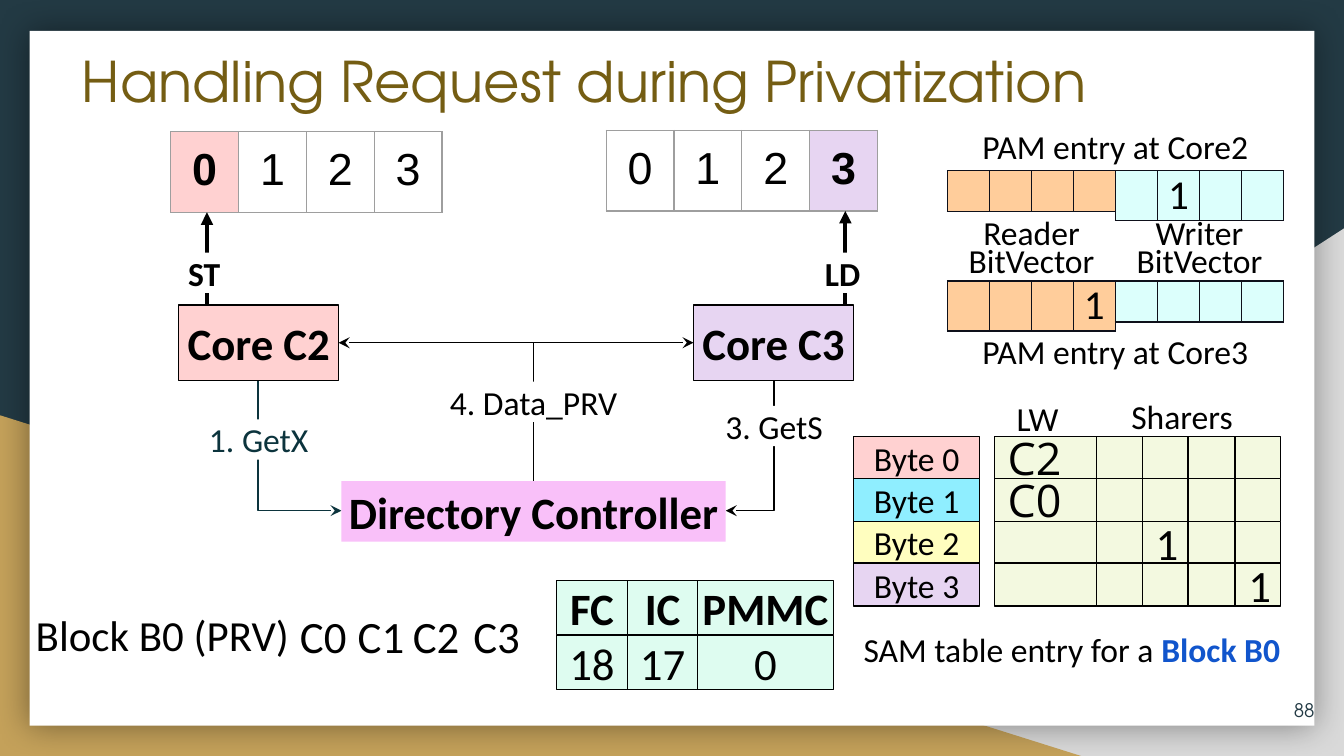
from lxml.etree import SubElement
from pptx import Presentation
from pptx.dml.color import RGBColor
from pptx.enum.shapes import MSO_CONNECTOR, MSO_SHAPE
from pptx.enum.text import MSO_ANCHOR, MSO_AUTO_SIZE, PP_ALIGN
from pptx.oxml.ns import qn
from pptx.util import Emu, Pt

EMU_PER_PX = 9144
BLACK, WHITE, NAVY = "000000", "FFFFFF", "233A44"
PINK, LILAC, ORANGE, AQUA = "FFD1D1", "E7D5F2", "FFCD9B", "DCFFFC"
SAM_GREEN, MINT = "F3F9E0", "DEFCF0"
BODY, DISPLAY = "Calibri", "TeX Gyre Adventor"


def px(length):
    """Turn a length in px into EMU."""
    return Emu(round(length * EMU_PER_PX))


def rgb(code):
    """Turn a hex string into a colour."""
    return RGBColor.from_string(code)


def apply(target, **values):
    """Set each given attribute on the target."""
    for name, value in values.items():
        setattr(target, name, value)


def write(frame, words, size=18, bold=False, color=BLACK, font=BODY,
          align=PP_ALIGN.CENTER, anchor=MSO_ANCHOR.MIDDLE, inset=0, spacing=None):
    """Fill a text frame with one formatted paragraph."""
    apply(frame, word_wrap=True, auto_size=MSO_AUTO_SIZE.NONE, vertical_anchor=anchor,
          margin_left=px(inset), margin_right=px(inset), margin_top=0, margin_bottom=0)
    paragraph = frame.paragraphs[0]
    apply(paragraph, alignment=align, line_spacing=spacing)
    return add_run(paragraph, words, size, bold, color, font)


def add_run(paragraph, words, size, bold, color, font=BODY):
    """Append a formatted run to a paragraph."""
    run = paragraph.add_run()
    run.text = words
    apply(run.font, size=Pt(size), bold=bold, name=font)
    run.font.color.rgb = rgb(color)
    return paragraph


def add_text(slide, box, words, **style):
    """Place a text box and return its paragraph."""
    return write(slide.shapes.add_textbox(*map(px, box)).text_frame, words, **style)


def add_block(slide, box, fill, words="", outline=BLACK, kind=MSO_SHAPE.RECTANGLE, **style):
    """Place a filled shape, with a thin outline and text where given."""
    block = slide.shapes.add_shape(kind, *map(px, box))
    block.shadow.inherit = False
    block.fill.solid()
    block.fill.fore_color.rgb = rgb(fill)
    if outline:
        block.line.color.rgb = rgb(outline)
        block.line.width = Pt(0.75)
    else:
        block.line.fill.background()
    if words:
        write(block.text_frame, words, **style)
    return block


def add_arrow(slide, start, end, color=BLACK, width=0.75, head="stealth"):
    """Draw an arrow that runs vertically, then turns to its end where needed."""
    (x0, y0), (x1, y1) = start, end
    dx, dy = x1 - x0, y1 - y0
    if dx:
        left, top = (x0 + x1 - abs(dy)) / 2, (y0 + y1 - abs(dx)) / 2
        arrow = slide.shapes.add_connector(
            MSO_CONNECTOR.ELBOW, px(left), px(top), px(left + abs(dy)), px(top + abs(dx)))
        properties = arrow._element.spPr
        properties.find(qn("a:prstGeom")).set("prst", "bentConnector2")
        frame = properties.find(qn("a:xfrm"))
        frame.set("rot", str((270 if dx > 0 else 90) * 60000))
        if (dx > 0) == (dy > 0):
            frame.set("flipH", "1")
    else:
        arrow = slide.shapes.add_connector(MSO_CONNECTOR.STRAIGHT, px(x0), px(y0), px(x1), px(y1))
    arrow.line.color.rgb = rgb(color)
    arrow.line.width = Pt(width)
    SubElement(arrow.line._get_or_add_ln(), qn("a:tailEnd"), type=head)
    SubElement(arrow._element.spPr, qn("a:effectLst"))


def add_strip(slide, box, words, fills, border, marked=None, inset=0, **style):
    """Place a one-row table whose marked cell is bold."""
    strip = slide.shapes.add_table(1, len(words), *map(px, box)).table
    apply(strip, first_row=False, horz_banding=False)
    for index, (cell, word, fill) in enumerate(zip(strip.rows[0].cells, words, fills)):
        properties = cell._tc.get_or_add_tcPr()
        for side in ("lnL", "lnR", "lnT", "lnB"):
            edge = SubElement(properties, qn("a:" + side), w=str(Pt(0.75)))
            SubElement(SubElement(edge, qn("a:solidFill")), qn("a:srgbClr"), val=border)
        cell.fill.solid()
        cell.fill.fore_color.rgb = rgb(fill)
        for side in ("left", "right", "top", "bottom"):
            setattr(cell, "margin_" + side, px(inset))
        paragraph = cell.text_frame.paragraphs[0]
        paragraph.alignment = PP_ALIGN.CENTER
        if word:
            add_run(paragraph, word, bold=index == marked, color=BLACK, **style)
        else:
            paragraph.font.size = Pt(18)


def build_backdrop(slide, box):
    """Draw the dark ground, the two corner triangles and the white panel."""
    left, top, width, height = box
    slide.background.fill.solid()
    slide.background.fill.fore_color.rgb = rgb(NAVY)
    corner = add_block(slide, (left + 392, top + 170, width - 392, height - 170), "D9D9D9",
                       outline=None, kind=MSO_SHAPE.RIGHT_TRIANGLE)
    corner._element.spPr.find(qn("a:xfrm")).set("flipH", "1")
    add_block(slide, (left, top + 309, 806, height - 309), "C4A15A",
              outline=None, kind=MSO_SHAPE.RIGHT_TRIANGLE)
    panel = add_block(slide, (left + 22, top + 23, width - 44, height - 46), WHITE, outline=None)
    effects = panel._element.spPr.find(qn("a:effectLst"))
    glow = SubElement(effects, qn("a:outerShdw"), blurRad=str(Pt(18)), dist="0", dir="0",
                      algn="ctr", rotWithShape="0")
    SubElement(SubElement(glow, qn("a:srgbClr"), val=BLACK), qn("a:alpha"), val="40000")


def build_title(slide, box):
    """Move and format the title placeholder."""
    title = slide.shapes.title
    slide.shapes._spTree.append(title._element)
    apply(title, **dict(zip(("left", "top", "width", "height"), map(px, box))))
    write(title.text_frame, "Handling Request during Privatization", size=30, color="745D13",
          font=DISPLAY, align=PP_ALIGN.LEFT, inset=10)


def build_core(slide, box, name, fill, access, arrow_x, label_x, line_corner, marked):
    """Draw a core, its cache line above and the access that joins them."""
    left, top, width, height = box
    line_left, line_top = line_corner
    fills = [fill if index == marked else WHITE for index in range(4)]
    add_strip(slide, (line_left, line_top, 202, 60), "0123", fills, "9E9E9E", marked,
              inset=10, size=24, font="Arial")
    add_block(slide, box, fill, name, size=24, bold=True)
    add_arrow(slide, (left + arrow_x, top), (left + arrow_x, line_top + 60),
              width=2.25, head="triangle")
    add_block(slide, (left + label_x, top - 39, 38, 30), WHITE, access, outline=None, bold=True)


def build_protocol(slide, box):
    """Draw both cores, the directory and the messages between them."""
    left, top, width, height = box
    directory_x, directory_y = left + 270, top + 261
    for core_x in (left + 125, left + 389):
        add_arrow(slide, (directory_x, directory_y), (core_x, top + 158))
    add_arrow(slide, (left + 65, top + 186), (left + 127, top + 283), "0C343D")
    add_arrow(slide, (left + 449, top + 186), (left + 413, top + 283))
    build_core(slide, (left + 6, top + 130, 119, 56), "Core C2", PINK, "ST", 21, 0,
               (left, top + 1), 0)
    build_core(slide, (left + 389, top + 130, 119, 56), "Core C3", LILAC, "LD", 113, 92,
               (left + 324, top), 3)
    add_block(slide, (left + 127, directory_y, 286, 45), "F9C0F9", "Directory Controller",
              outline=None, size=24, bold=True)
    messages = [(21, 215, 89, "1. GetX", "0C343D"), (203, 187, 134, "4. Data_PRV", BLACK),
                (394, 205, 110, "3. GetS", BLACK)]
    for x, y, span, message, color in messages:
        add_block(slide, (left + x, top + y, span, 30), WHITE, message, outline=None, color=color)


def build_block_state(slide, box):
    """Write the block name and the cores beside it."""
    left, top, width, height = box
    add_text(slide, (left, top, 196, height), "Block B0 (PRV)", size=23)
    for index, x in enumerate((196, 239, 280, 325)):
        add_text(slide, (left + x, top + 1, 43, height), f"C{index}", size=24)


def build_counters(slide, box):
    """Draw the counter names over their values."""
    left, top, width, height = box
    columns = [(0, 53, "FC", "18"), (53, 52, "IC", "17"), (105, width - 105, "PMMC", "0")]
    for x, span, name, value in columns:
        for y, words, bold in ((0, name, True), (41, value, False)):
            add_block(slide, (left + x, top + y, span, height - 41), MINT, words,
                      size=24, bold=bold)


def build_pam(slide, box):
    """Draw the access vectors of both cores with their captions."""
    left, top, width, height = box
    half = width // 2
    entries = [(0, 33, "PAM entry at Core2", (None, 1)),
               (152, 115, "PAM entry at Core3", (3, None))]
    for caption_y, strip_y, caption, set_bits in entries:
        add_text(slide, (left, top + caption_y, width, 30), caption)
        for side, (set_bit, fill) in enumerate(zip(set_bits, (ORANGE, AQUA))):
            bits = ["1" if bit == set_bit else "" for bit in range(4)]
            add_strip(slide, (left + side * half, top + strip_y, half, 30), bits, [fill] * 4,
                      "0E101A", size=22, font=BODY)
    for side, role in enumerate(("Reader", "Writer")):
        add_text(slide, (left + side * half, top + 72, half, 42), f"{role} BitVector",
                 spacing=0.7, inset=10)


def build_sam(slide, box):
    """Draw the last writer and sharers of each byte."""
    left, top, width, height = box
    add_text(slide, (left + 111, top + 2, 52, 18), "LW", spacing=0.6)
    add_text(slide, (left + 194, top, 101, 18), "Sharers", spacing=0.6)
    column_edges = [105] + [181 + 103 * column // 3 for column in range(5)]
    row_edges = [top + 20 + 63 * row // 2 for row in range(5)]
    marks = {(0, 0): "C2", (1, 0): "C0", (2, 2): "1", (3, 4): "1"}
    for row, fill in enumerate((PINK, "8FEEFF", "FFFEBF", LILAC)):
        y, tall = row_edges[row], row_edges[row + 1] - row_edges[row]
        add_block(slide, (left, y, 94, tall), fill, f"Byte {row}")
        for column, (start, end) in enumerate(zip(column_edges, column_edges[1:])):
            add_block(slide, (left + start, y, end - start, tall), SAM_GREEN,
                      marks.get((row, column), ""), size=24, inset=10, align=PP_ALIGN.LEFT,
                      font=BODY if column else "Open Sans")
    caption = add_text(slide, (left - 10, top + 153, 345, 50), "SAM table entry for a ")
    add_run(caption, "Block B0", 18, True, "1155CC")


def main():
    """Build the slide and save it."""
    deck = Presentation()
    apply(deck, slide_width=px(1000), slide_height=px(1000) * 9 // 16)
    slide = deck.slides.add_slide(deck.slide_layouts[5])
    build_backdrop(slide, (0, 0, 1000, 563))
    build_title(slide, (51, 24, 842, 71))
    build_protocol(slide, (127, 97, 525, 306))
    build_block_state(slide, (23, 444, 368, 56))
    build_counters(slide, (414, 432, 206, 81))
    build_pam(slide, (705, 94, 250, 182))
    build_sam(slide, (635, 305, 318, 203))
    add_text(slide, (951, 516, 27, 25), "88", size=10, color=NAVY, font=DISPLAY,
             align=PP_ALIGN.RIGHT)
    deck.save("out.pptx")


if __name__ == "__main__":
    main()
